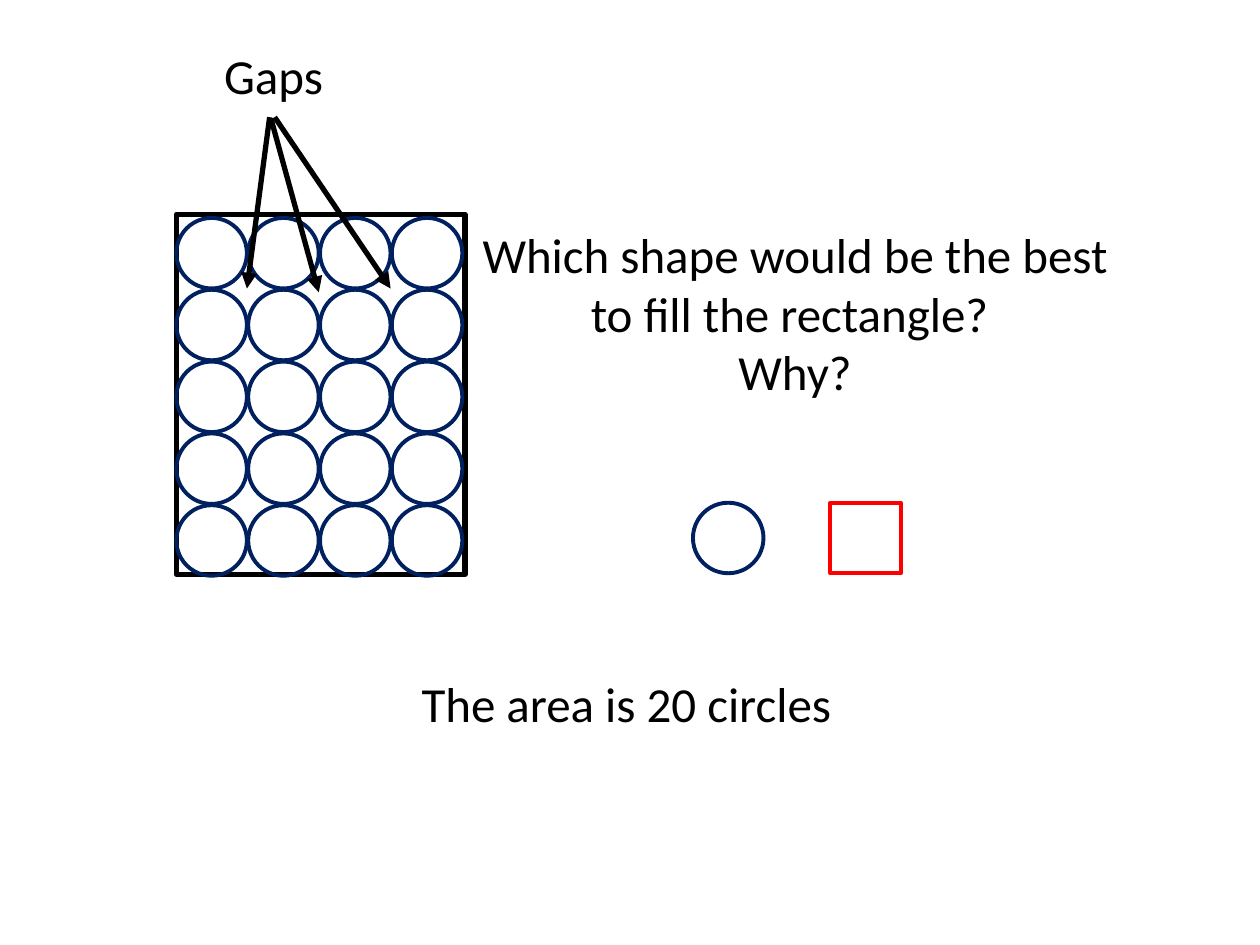
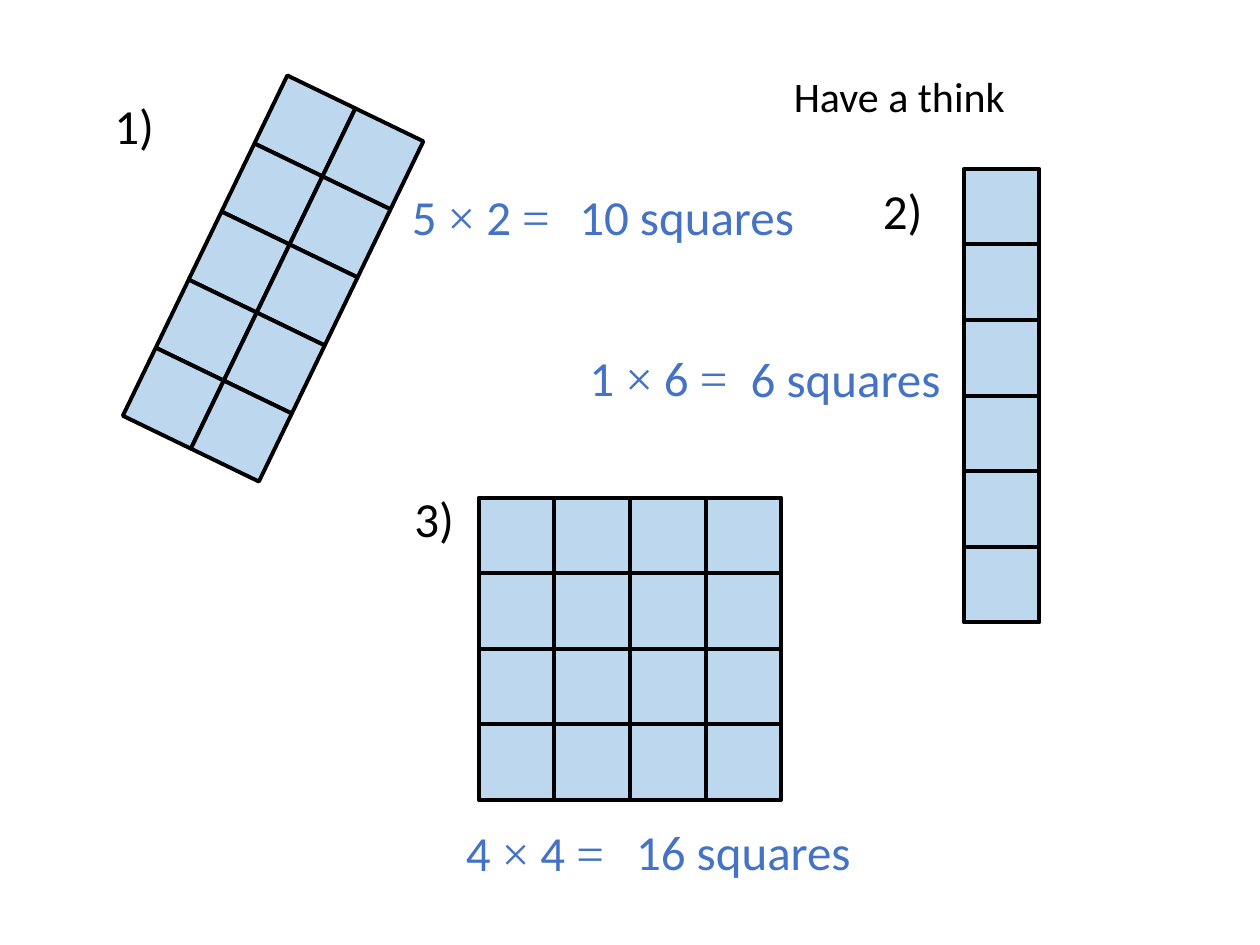
from dataclasses import dataclass
from math import cos, radians, sin

from lxml.etree import SubElement
from pptx import Presentation
from pptx.dml.color import RGBColor
from pptx.enum.shapes import MSO_CONNECTOR, MSO_SHAPE
from pptx.enum.text import MSO_ANCHOR, MSO_AUTO_SIZE, PP_ALIGN
from pptx.oxml.ns import qn
from pptx.util import Inches, Pt


@dataclass(frozen=True)
class Theme:
    ink: RGBColor = RGBColor(0x00, 0x00, 0x00)
    navy: RGBColor = RGBColor(0x00, 0x20, 0x60)
    red: RGBColor = RGBColor(0xFF, 0x00, 0x00)
    tile: RGBColor = RGBColor(0xBD, 0xD7, 0xEE)
    answer: RGBColor = RGBColor(0x44, 0x72, 0xC4)
    font: str = "Calibri"
    symbol_font: str = "Times New Roman"
    text_size: Pt = Pt(28)
    small_size: Pt = Pt(24)
    thin: Pt = Pt(2.25)
    thick: Pt = Pt(3)


theme = Theme()
CIRCLE = 0.56
TILE = 0.6


def draw_shape(shapes, kind, left, top, width, height, line, weight=theme.thin, fill=None):
    shape = shapes.add_shape(kind, Inches(left), Inches(top), Inches(width), Inches(height))
    shape.shadow.inherit = False
    shape.line.color.rgb = line
    shape.line.width = weight
    if fill is None:
        shape.fill.background()
    else:
        shape.fill.solid()
        shape.fill.fore_color.rgb = fill
    return shape


def write_text(box, place, lines, color=theme.ink, size=theme.text_size, align=PP_ALIGN.LEFT):
    """Place a box and fill it; each line is a list of spans."""
    box.left, box.top, box.width, box.height = [Inches(length) for length in place]
    frame = box.text_frame
    frame.word_wrap = True
    frame.auto_size = MSO_AUTO_SIZE.NONE
    frame.vertical_anchor = MSO_ANCHOR.TOP
    for number, spans in enumerate(lines):
        para = frame.paragraphs[0] if number == 0 else frame.add_paragraph()
        para.alignment = align
        para.font.name = theme.font
        para.font.size = size
        para.font.color.rgb = color
        for text in spans:
            span = para.add_run()
            span.text = text
            if text in ("×", "="):
                span.font.name = theme.symbol_font


deck = Presentation()
deck.slide_width = Inches(10)
deck.slide_height = Inches(7.5)
title_only = deck.slide_layouts[5]

# Slide 1: a rectangle filled with circles
page = deck.slides.add_slide(title_only)
write_text(page.shapes.title, (3.68, 1.73, 5.26, 1.51),
           [["Which shape would be the best to fill the rectangle? "], ["Why?"]],
           align=PP_ALIGN.CENTER)

draw_shape(page.shapes, MSO_SHAPE.RECTANGLE, 1.4, 1.7, 2.29, 2.86, theme.ink, theme.thick)
for row in range(5):
    for column in range(4):
        draw_shape(page.shapes, MSO_SHAPE.OVAL, 1.4 + 0.57 * column, 1.73 + 0.57 * row,
                   CIRCLE, CIRCLE, theme.navy)

# Arrows from the label to three gaps
for start_x, start_y, end_x, end_y in [(2.14, 0.93, 1.96, 2.29),
                                       (2.15, 0.94, 2.53, 2.32),
                                       (2.18, 0.93, 3.1, 2.29)]:
    arrow = page.shapes.add_connector(MSO_CONNECTOR.STRAIGHT, Inches(start_x), Inches(start_y),
                                      Inches(end_x), Inches(end_y))
    arrow.line.color.rgb = theme.ink
    arrow.line.width = theme.thick
    SubElement(arrow.line._get_or_add_ln(), qn("a:tailEnd"), type="triangle")
    SubElement(arrow._element.spPr, qn("a:effectLst"))

# The two shapes to choose from
draw_shape(page.shapes, MSO_SHAPE.OVAL, 5.5, 3.99, CIRCLE, CIRCLE, theme.navy)
draw_shape(page.shapes, MSO_SHAPE.RECTANGLE, 6.59, 3.99, CIRCLE, CIRCLE, theme.red)

# Label and conclusion
for text, place, align in [
    ("Gaps", (1.68, 0.31, 2.27, 0.57), PP_ALIGN.LEFT),
    ("The area is 20 circles", (2.34, 5.3, 5.26, 0.57), PP_ALIGN.CENTER),
]:
    write_text(page.shapes.add_textbox(0, 0, 0, 0), place, [[text]], align=align)

# Slide 2: areas counted in squares
page = deck.slides.add_slide(title_only)
write_text(page.shapes.title, (6.2, 0.51, 2.29, 0.5), [["Have a think"]],
           size=theme.small_size)

# Tile grids: corner of the first tile, rows, columns, rotation
for left, top, rows, columns, angle in [(2.12, 0.7, 5, 2, 25.8),
                                        (7.65, 1.34, 6, 1, 0),
                                        (3.8, 3.95, 4, 4, 0)]:
    grid = page.shapes.add_group_shape()
    step_x = TILE * cos(radians(angle))
    step_y = TILE * sin(radians(angle))
    for row in range(rows):
        for column in range(columns):
            tile = draw_shape(grid.shapes, MSO_SHAPE.RECTANGLE,
                              left + column * step_x - row * step_y,
                              top + column * step_y + row * step_x,
                              TILE, TILE, theme.ink, fill=theme.tile)
            tile.rotation = angle

# Question numbers
for text, left, top in [("1)", 0.81, 0.71), ("2)", 6.91, 1.38), ("3)", 3.19, 3.83)]:
    write_text(page.shapes.add_textbox(0, 0, 0, 0), (left, top, 0.6, 0.57), [[text]])

# Sums and their answers
for spans, left, top in [
    (["5 ", "×", " 2 ", "="], 3.17, 1.43),
    (["10 squares"], 4.5, 1.43),
    (["1 ", "×", " 6 ", "="], 4.58, 2.71),
    (["6 squares"], 5.86, 2.72),
    (["4 ", "×", " 4 ", "="], 3.6, 6.48),
    (["16 squares"], 4.95, 6.47),
]:
    write_text(page.shapes.add_textbox(0, 0, 0, 0), (left, top, 2, 0.57), [spans],
               color=theme.answer)

deck.save("out.pptx")
